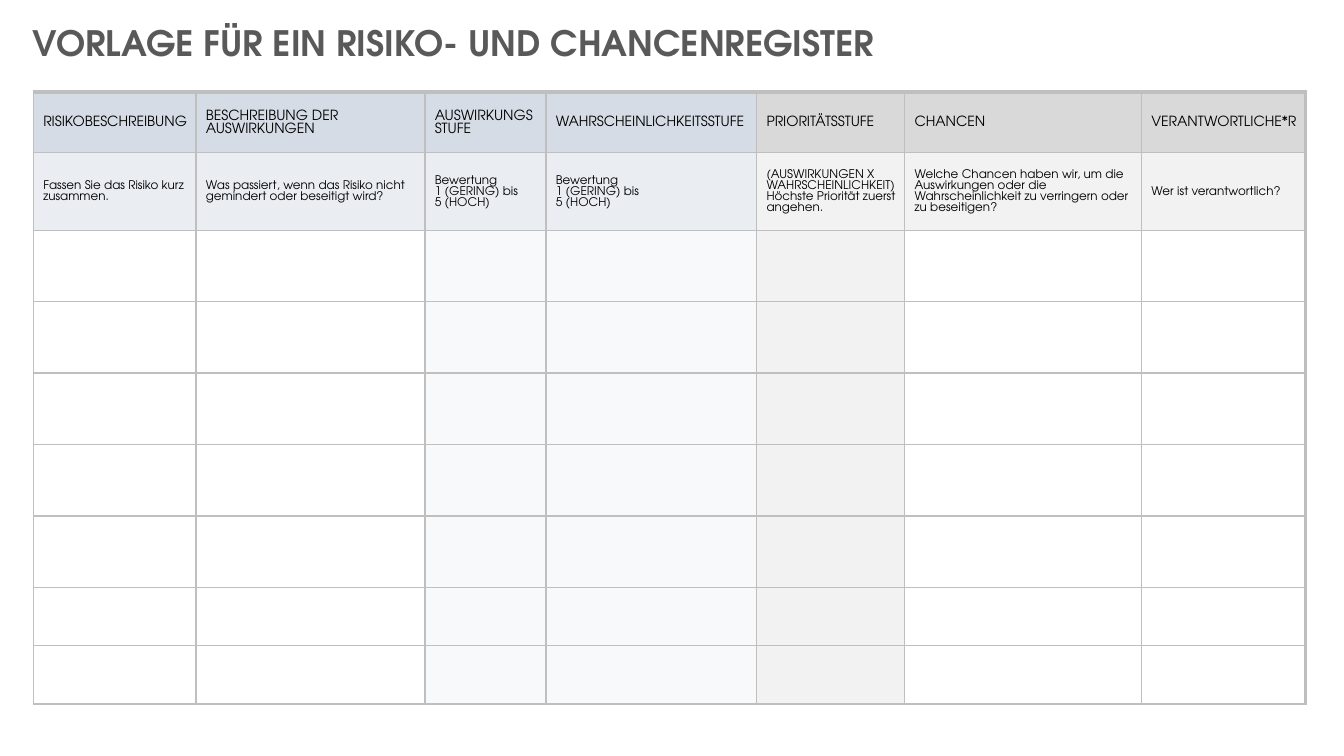
from lxml.etree import SubElement
from pptx import Presentation
from pptx.dml.color import RGBColor
from pptx.enum.text import MSO_ANCHOR, MSO_AUTO_SIZE
from pptx.oxml.ns import qn
from pptx.util import Cm, Pt

FONT = "TeX Gyre Adventor"
COLORS = {
    "title": "595959",
    "text": "000000",
    "border": "BFBFBF",
    "risk_header": "D6DCE5",
    "risk_hint": "EAEEF3",
    "risk_level": "F7F9FB",
    "action_header": "D9D9D9",
    "grey": "F2F2F2",
    "white": "FFFFFF",
}
RATING = "Bewertung \v1 (GERING) bis \v5 (HOCH)"
COLUMNS = [
    (4.1, "RISIKOBESCHREIBUNG", "Fassen Sie das Risiko kurz zusammen.",
     ("risk_header", "risk_hint", "white")),
    (5.77, "BESCHREIBUNG DER AUSWIRKUNGEN",
     "Was passiert, wenn das Risiko nicht gemindert oder beseitigt wird?",
     ("risk_header", "risk_hint", "white")),
    (3.05, "AUSWIRKUNGS\vSTUFE", RATING, ("risk_header", "risk_hint", "risk_level")),
    (5.31, "WAHRSCHEINLICHKEITSSTUFE", RATING, ("risk_header", "risk_hint", "risk_level")),
    (3.73, "PRIORITÄTSSTUFE",
     "(AUSWIRKUNGEN X \vWAHRSCHEINLICHKEIT)\vHöchste Priorität zuerst angehen.",
     ("action_header", "grey", "grey")),
    (5.97, "CHANCEN",
     "Welche Chancen haben wir, um die Auswirkungen oder die "
     "Wahrscheinlichkeit zu verringern oder zu beseitigen?",
     ("action_header", "grey", "white")),
    (4.14, "VERANTWORTLICHE*R", "Wer ist verantwortlich?",
     ("action_header", "grey", "white")),
]
ROW_HEIGHTS = [1.52, 1.96] + [1.8] * 5 + [1.47] * 2
TEXT_SIZES = [10, 8.5]


def format_runs(paragraph, size, color, bold=False):
    """Apply the slide font to every run of a paragraph."""
    for run in paragraph.runs:
        run.font.name = FONT
        run.font.size = Pt(size)
        run.font.bold = bold
        run.font.color.rgb = RGBColor.from_string(COLORS[color])


def set_borders(cell, **widths):
    """Draw the cell borders, given as side=points."""
    properties = cell._tc.get_or_add_tcPr()
    for side, width in widths.items():
        line = SubElement(properties, qn(f"a:ln{side}"), w=str(Pt(width)))
        fill = SubElement(line, qn("a:solidFill"))
        SubElement(fill, qn("a:srgbClr"), val=COLORS["border"])


def add_title(slide, left, top, width, height):
    """Place the slide title in the given box."""
    text_frame = slide.shapes.add_textbox(Cm(left), Cm(top), Cm(width), Cm(height)).text_frame
    text_frame.word_wrap = True
    text_frame.auto_size = MSO_AUTO_SIZE.SHAPE_TO_FIT_TEXT
    text_frame.text = "VORLAGE FÜR EIN RISIKO- UND CHANCENREGISTER"
    format_runs(text_frame.paragraphs[0], 25, "title", bold=True)


def fill_cell(cell, text, size):
    """Write a header or hint into a cell."""
    cell.vertical_anchor = MSO_ANCHOR.MIDDLE
    cell.margin_left = Cm(0.25)
    cell.margin_top = cell.margin_right = Cm(0.03)
    cell.margin_bottom = 0
    paragraph = cell.text_frame.paragraphs[0]
    paragraph.text = text
    format_runs(paragraph, size, "text")


def add_register(slide, left, top, width, height):
    """Place the risk register table in the given box."""
    table = slide.shapes.add_table(
        len(ROW_HEIGHTS), len(COLUMNS), Cm(left), Cm(top), Cm(width), Cm(height)
    ).table
    table.first_row = table.horz_banding = False
    last_row, last_column = len(ROW_HEIGHTS) - 1, len(COLUMNS) - 1
    for row, row_height in zip(table.rows, ROW_HEIGHTS):
        row.height = Cm(row_height)
    for column_index, (column_width, header, hint, fills) in enumerate(COLUMNS):
        table.columns[column_index].width = Cm(column_width)
        for row_index in range(len(ROW_HEIGHTS)):
            cell = table.cell(row_index, column_index)
            set_borders(
                cell,
                L=1,
                R=2.25 if column_index == last_column else 1,
                T=3 if row_index == 0 else 1,
                B=2.25 if row_index == last_row else 1,
            )
            cell.fill.solid()
            cell.fill.fore_color.rgb = RGBColor.from_string(COLORS[fills[min(row_index, 2)]])
        for row_index, (text, size) in enumerate(zip((header, hint), TEXT_SIZES)):
            fill_cell(table.cell(row_index, column_index), text, size)


def main():
    """Build and save the presentation."""
    presentation = Presentation()
    presentation.slide_width = Cm(33.87)
    presentation.slide_height = Cm(19.05)
    slide = presentation.slides.add_slide(presentation.slide_layouts[6])
    add_title(slide, 0.58, 0.43, 32.31, 1.37)
    add_register(slide, 0.84, 2.32, 32.07, 15.42)
    presentation.save("out.pptx")


if __name__ == "__main__":
    main()
